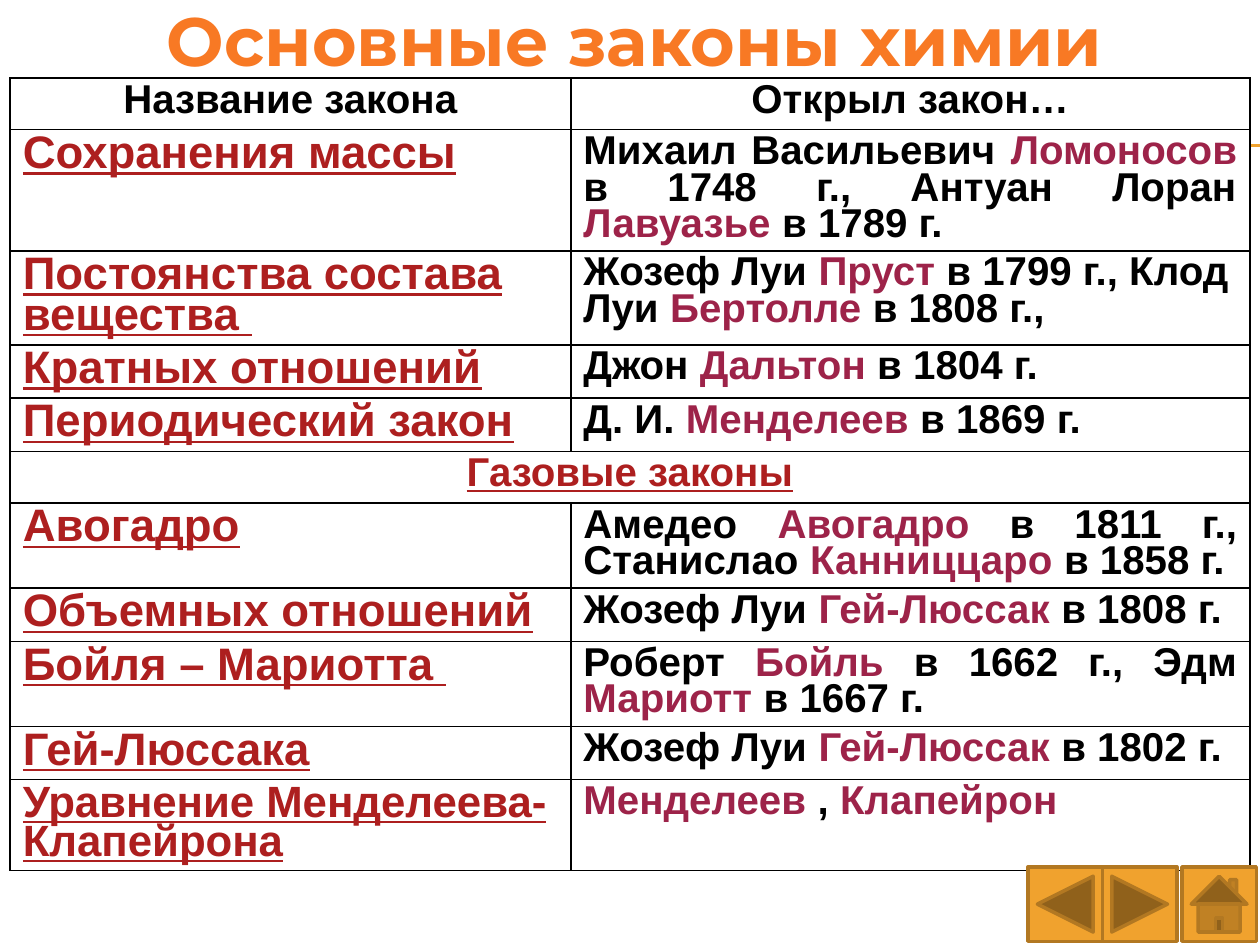
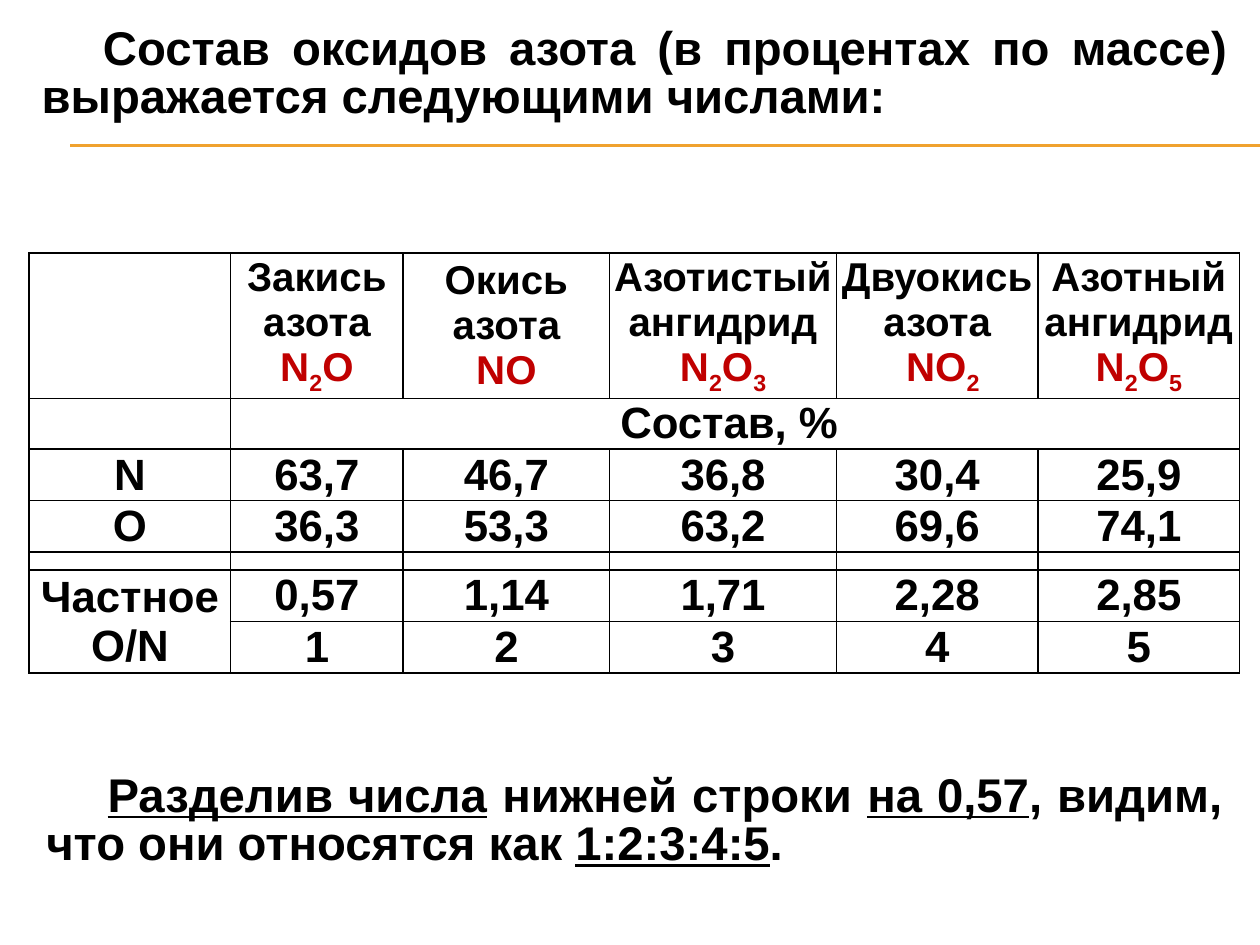
import dataclasses

import lxml.etree
import pptx
import pptx.dml.color
import pptx.enum.shapes
import pptx.enum.text
import pptx.oxml.ns
import pptx.util

Pt = pptx.util.Pt
qn = pptx.oxml.ns.qn
ALIGN = pptx.enum.text.PP_ALIGN
ANCHOR = pptx.enum.text.MSO_ANCHOR
SHAPE = pptx.enum.shapes.MSO_SHAPE


@dataclasses.dataclass(frozen=True)
class Theme:
    font: str = "Arial"
    title_font: str = "Montserrat"
    black: str = "000000"
    white: str = "FFFFFF"
    title: str = "F87924"
    law: str = "AD1F1F"
    scientist: str = "9D2349"
    formula: str = "C00000"
    gold: str = "F0A22E"
    gold_dark: str = "B27822"
    title_size: float = 39
    statement_size: float = 27
    law_size: float = 26
    number_size: float = 25
    cell_size: float = 23
    spacer_size: float = 7


THEME = Theme()

# Asterisks enclose highlighted words, underscores enclose subscripts.
LAWS = [
    ("Сохранения массы", "Михаил Васильевич *Ломоносов* в 1748 г., Антуан Лоран *Лавуазье* в 1789 г.", ALIGN.JUSTIFY),
    ("Постоянства состава вещества ", "Жозеф Луи *Пруст* в 1799 г., Клод Луи *Бертолле* в 1808 г.,", ALIGN.LEFT),
    ("Кратных отношений", "Джон *Дальтон* в 1804 г.", ALIGN.LEFT),
    ("Периодический закон", "Д. И. *Менделеев* в 1869 г.", ALIGN.LEFT),
    ("Газовые законы", None, ALIGN.CENTER),
    ("Авогадро", "Амедео *Авогадро* в 1811 г., Станислао *Канниццаро* в 1858 г.", ALIGN.JUSTIFY),
    ("Объемных отношений", "Жозеф Луи *Гей-Люссак* в 1808 г.", ALIGN.JUSTIFY),
    ("Бойля – Мариотта ", "Роберт *Бойль* в 1662 г., Эдм *Мариотт* в 1667 г.", ALIGN.JUSTIFY),
    ("Гей-Люссака", "Жозеф Луи *Гей-Люссак* в 1802 г.", ALIGN.JUSTIFY),
    ("Уравнение Менделеева-Клапейрона", "*Менделеев* , *Клапейрон*", ALIGN.LEFT),
]
LAW_COLUMNS = [320.4, 388.1]
LAW_ROWS = [29.5, 69, 53.5, 30.5, 30.5, 29.5, 48.5, 30.5, 48.5, 30.5, 52]

OXIDES = [
    ["", "Закись азота *N_2_O*", "Окись азота\n*NO*", "Азотистый ангидрид *N_2_O_3_*",
     "Двуокись азота\n *NO_2_*", "Азотный ангидрид *N_2_O_5_*"],
    ["", "Состав, % ", "", "", "", ""],
    ["N", "63,7", "46,7", "36,8", "30,4", "25,9"],
    ["O", "36,3", "53,3", "63,2", "69,6", "74,1"],
    [""] * 6,
    ["Частное O/N", "0,57", "1,14", "1,71", "2,28", "2,85"],
    ["", "1", "2", "3", "4", "5"],
]
OXIDE_COLUMNS = [115.2, 98.6, 118, 129.6, 115.2, 115.2]
OXIDE_ROWS = [82.9, 29.1, 29.4, 29.4, 10.3, 29.4, 29.4]


def rgb(colour):
    return pptx.dml.color.RGBColor.from_string(colour)


def write_text(text_frame, text, size=THEME.cell_size, colour=THEME.black, font=THEME.font,
               align=ALIGN.LEFT, spacing=1.0, indent=0, underline=False,
               highlight=None, highlight_underline=False):
    """Write marked-up text, one paragraph a line, all in bold."""
    for number, line in enumerate(text.split("\n")):
        paragraph = text_frame.add_paragraph() if number else text_frame.paragraphs[0]
        paragraph.alignment = align
        paragraph.line_spacing = spacing
        if indent:
            paragraph._p.get_or_add_pPr().set("indent", str(Pt(indent)))
        for position, phrase in enumerate(line.split("*")):
            marked = position % 2 == 1
            for part, piece in enumerate(phrase.split("_")):
                if not piece:
                    continue
                run = paragraph.add_run()
                run.text = piece
                run.font.name = font
                run.font.size = Pt(size)
                run.font.bold = True
                run.font.underline = underline or (marked and highlight_underline)
                run.font.color.rgb = rgb(highlight if marked and highlight else colour)
                if part % 2:
                    run.font._element.set("baseline", "-25000")


def place_title(slide, left, top, width, height, text, wrap=True, **text_format):
    title = slide.shapes.title
    title.left, title.top, title.width, title.height = Pt(left), Pt(top), Pt(width), Pt(height)
    title.text_frame.auto_size = pptx.enum.text.MSO_AUTO_SIZE.NONE
    title.text_frame.vertical_anchor = ANCHOR.TOP
    title.text_frame.word_wrap = wrap
    write_text(title.text_frame, text, **text_format)


def add_text_box(slide, left, top, width, height, text, **text_format):
    box = slide.shapes.add_textbox(Pt(left), Pt(top), Pt(width), Pt(height))
    box.text_frame.word_wrap = True
    write_text(box.text_frame, text, **text_format)


def add_gold_rule(slide):
    for y in (82.8, 83.5):
        line = slide.shapes.add_connector(
            pptx.enum.shapes.MSO_CONNECTOR.STRAIGHT, Pt(40.3), Pt(y), Pt(720), Pt(y))
        line.line.color.rgb = rgb(THEME.gold)
        line.line.width = Pt(0.75)
        lxml.etree.SubElement(line._element.spPr, qn("a:effectLst"))


def add_borders(cell):
    properties = cell._tc.get_or_add_tcPr()
    for side in ("a:lnL", "a:lnR", "a:lnT", "a:lnB"):
        border = lxml.etree.SubElement(properties, qn(side), w=str(Pt(1)))
        fill = lxml.etree.SubElement(border, qn("a:solidFill"))
        lxml.etree.SubElement(fill, qn("a:srgbClr"), val=THEME.black)


def add_grid(slide, left, top, columns, rows):
    """Add a white table with thin black borders and return it."""
    table = slide.shapes.add_table(len(rows), len(columns), Pt(left), Pt(top),
                                   Pt(sum(columns)), Pt(sum(rows))).table
    for column, width in zip(table.columns, columns):
        column.width = Pt(width)
    for row, height in zip(table.rows, rows):
        row.height = Pt(height)
    for cell in table.iter_cells():
        add_borders(cell)
        cell.fill.solid()
        cell.fill.fore_color.rgb = rgb(THEME.white)
    return table


def shrink_empty_cell(cell):
    """Let an empty cell be lower than a line of default text."""
    lxml.etree.SubElement(cell.text_frame.paragraphs[0]._p, qn("a:endParaRPr"),
                          sz=str(int(THEME.spacer_size * 100)))


def add_laws_table(slide):
    table = add_grid(slide, 5.8, 44.6, LAW_COLUMNS, LAW_ROWS)
    for column, heading in enumerate(("Название закона", "Открыл закон…")):
        write_text(table.cell(0, column).text_frame, heading, align=ALIGN.CENTER, spacing=0.8)
    for row, (law, discovery, align) in enumerate(LAWS, 1):
        law_cell, discovery_cell = table.cell(row, 0), table.cell(row, 1)
        law_format = dict(colour=THEME.law, underline=True, spacing=0.8)
        if discovery is None:
            law_cell.merge(discovery_cell)
            write_text(law_cell.text_frame, law, align=align, **law_format)
            continue
        size = THEME.number_size if row == len(LAWS) else THEME.law_size
        write_text(law_cell.text_frame, law, size=size, **law_format)
        write_text(discovery_cell.text_frame, discovery, align=align, spacing=0.8,
                   highlight=THEME.scientist)


def add_oxides_table(slide):
    table = add_grid(slide, 16.6, 144.7, OXIDE_COLUMNS, OXIDE_ROWS)
    table.cell(1, 1).merge(table.cell(1, 5))
    table.cell(5, 0).merge(table.cell(6, 0))
    for row, texts in enumerate(OXIDES):
        for column, text in enumerate(texts):
            cell = table.cell(row, column)
            cell.vertical_anchor = ANCHOR.MIDDLE
            cell.margin_left = cell.margin_right = Pt(2.2)
            cell.margin_top = cell.margin_bottom = Pt(0.4)
            if text:
                write_text(cell.text_frame, text, align=ALIGN.CENTER, highlight=THEME.formula,
                           size=THEME.number_size if row else THEME.cell_size)
            else:
                shrink_empty_cell(cell)


def add_navigation_button(slide, kind, left):
    button = slide.shapes.add_shape(kind, Pt(left), Pt(495.4), Pt(42.5), Pt(42.5))
    button.shadow.inherit = False
    button.fill.solid()
    button.fill.fore_color.rgb = rgb(THEME.gold)
    button.line.color.rgb = rgb(THEME.gold_dark)
    button.line.width = Pt(2)


def add_slide(presentation):
    slide = presentation.slides.add_slide(presentation.slide_layouts.get_by_name("Title Only"))
    add_gold_rule(slide)
    return slide


def build_laws_slide(presentation):
    slide = add_slide(presentation)
    place_title(slide, 72.7, 4.3, 579.6, 46, "Основные законы химии", wrap=False,
                size=THEME.title_size, colour=THEME.title, font=THEME.title_font,
                align=ALIGN.CENTER, spacing=0.8)
    add_laws_table(slide)
    add_navigation_button(slide, SHAPE.ACTION_BUTTON_FORWARD_OR_NEXT, 630)
    add_navigation_button(slide, SHAPE.ACTION_BUTTON_BACK_OR_PREVIOUS, 587.5)
    add_navigation_button(slide, SHAPE.ACTION_BUTTON_HOME, 675.4)


def build_oxides_slide(presentation):
    slide = add_slide(presentation)
    statement = dict(size=THEME.statement_size, align=ALIGN.JUSTIFY, spacing=0.85, indent=35)
    place_title(slide, 16.6, 11.5, 691.9, 62.6,
                "Состав оксидов азота (в процентах по массе) выражается следующими числами:",
                **statement)
    add_oxides_table(slide)
    add_text_box(slide, 19.4, 438.5, 686.2, 62.6,
                 "*Разделив числа* нижней строки *на 0,57*, видим, что они относятся как *1:2:3:4:5*.",
                 highlight_underline=True, **statement)


def main():
    presentation = pptx.Presentation()
    presentation.slide_width, presentation.slide_height = Pt(720), Pt(540)
    build_laws_slide(presentation)
    build_oxides_slide(presentation)
    presentation.save("out.pptx")


if __name__ == "__main__":
    main()
